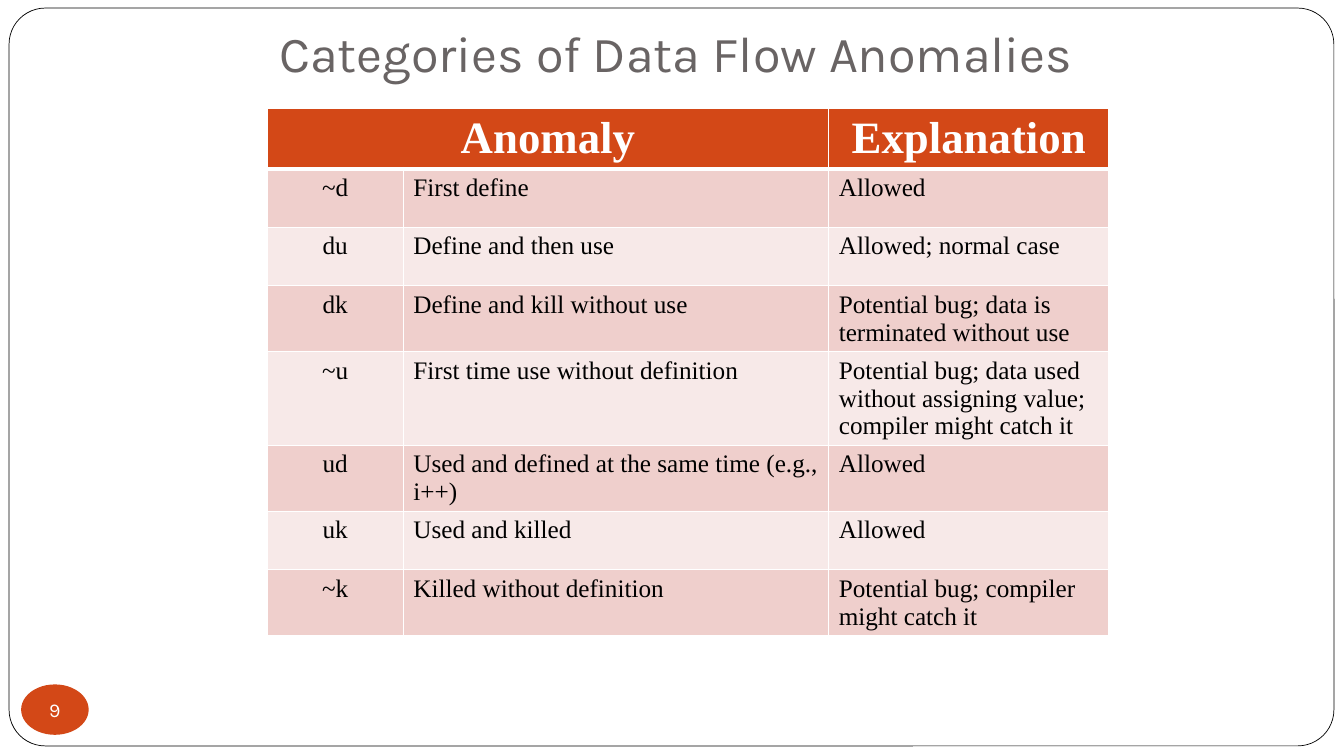
from lxml.etree import SubElement
from pptx import Presentation
from pptx.dml.color import RGBColor
from pptx.enum.shapes import MSO_SHAPE
from pptx.enum.text import MSO_ANCHOR, MSO_AUTO_SIZE, PP_ALIGN
from pptx.oxml.ns import qn
from pptx.util import Inches, Pt

ORANGE, WHITE, BLACK, GREY = "D34817", "FFFFFF", "000000", "696464"
BANDS = ["EFCFCC", "F7E9E8"]
COLUMNS = [1.35, 4.22, 2.78]
ROW_HEIGHT = 0.58
ROWS = [
    ("Anomaly", "", "Explanation"),
    ("~d", "First define", "Allowed"),
    ("du", "Define and then use", "Allowed; normal case"),
    ("dk", "Define and kill without use",
     "Potential bug; data is terminated without use"),
    ("~u", "First time use without definition",
     "Potential bug; data used without assigning value; compiler might catch it"),
    ("ud", "Used and defined at the same time (e.g., i++)", "Allowed"),
    ("uk", "Used and killed", "Allowed"),
    ("~k", "Killed without definition", "Potential bug; compiler might catch it"),
]


def color(value):
    return RGBColor.from_string(value)


def write(frame, text, font, size, value, align, bold=False):
    frame.text = text
    para = frame.paragraphs[0]
    para.alignment = align
    for span in para.runs:
        span.font.name = font
        span.font.size = Pt(size)
        span.font.bold = bold
        span.font.color.rgb = color(value)


deck = Presentation()
deck.slide_width, deck.slide_height = Inches(13.33), Inches(7.5)
page = deck.slides.add_slide(deck.slide_layouts[5])

# Title
title = page.shapes.title
title.left, title.top = Inches(2.67), Inches(0.3)
title.width, title.height = Inches(8.5), Inches(0.62)
heading = title.text_frame
write(heading, "Categories of Data Flow Anomalies", "Karla", 36, GREY, PP_ALIGN.LEFT)
heading.auto_size = MSO_AUTO_SIZE.NONE
heading.vertical_anchor = MSO_ANCHOR.BOTTOM
heading.margin_bottom = Inches(0.1)

# Rounded page border, behind the title
border = page.shapes.add_shape(MSO_SHAPE.ROUNDED_RECTANGLE, Inches(0.09),
                               Inches(0.08), Inches(13.14), Inches(7.32))
border.adjustments[0] = 0.049
border.shadow.inherit = False
border.fill.solid()
border.fill.fore_color.rgb = color(WHITE)
border.line.color.rgb = color(BLACK)
border.line.width = Pt(0.5)
title._element.addprevious(border._element)

# Page number badge
badge = page.shapes.add_shape(MSO_SHAPE.OVAL, Inches(0.21), Inches(6.79),
                              Inches(0.67), Inches(0.5))
badge.shadow.inherit = False
badge.fill.solid()
badge.fill.fore_color.rgb = color(ORANGE)
badge.line.fill.background()
number = badge.text_frame
write(number, "9", "Karla", 14, WHITE, PP_ALIGN.CENTER)
number.word_wrap = False
number.vertical_anchor = MSO_ANCHOR.MIDDLE
number.margin_left = number.margin_right = number.margin_top = number.margin_bottom = 0

# Anomaly table
table = page.shapes.add_table(len(ROWS), len(COLUMNS), Inches(2.65), Inches(1.08),
                              Inches(sum(COLUMNS)),
                              Inches(ROW_HEIGHT * len(ROWS))).table
for column, width in zip(table.columns, COLUMNS):
    column.width = Inches(width)
for r, texts in enumerate(ROWS):
    table.rows[r].height = Inches(ROW_HEIGHT)
    header = r == 0
    for c, text in enumerate(texts):
        cell = table.cell(r, c)
        align = PP_ALIGN.CENTER if header or c == 0 else PP_ALIGN.LEFT
        write(cell.text_frame, text, "Times New Roman", 32 if header else 18,
              WHITE if header else BLACK, align, header)

        # White cell borders, thicker under the header; the fill follows them
        props = cell._tc.get_or_add_tcPr()
        for side in ("L", "R", "T", "B"):
            thick = (header and side == "B") or (r == 1 and side == "T")
            edge = SubElement(props, qn(f"a:ln{side}"), w=str(Pt(3 if thick else 1)))
            SubElement(SubElement(edge, qn("a:solidFill")), qn("a:srgbClr"), val=WHITE)
        cell.fill.solid()
        cell.fill.fore_color.rgb = color(ORANGE if header else BANDS[(r - 1) % 2])
table.cell(0, 0).merge(table.cell(0, 1))

deck.save("out.pptx")
